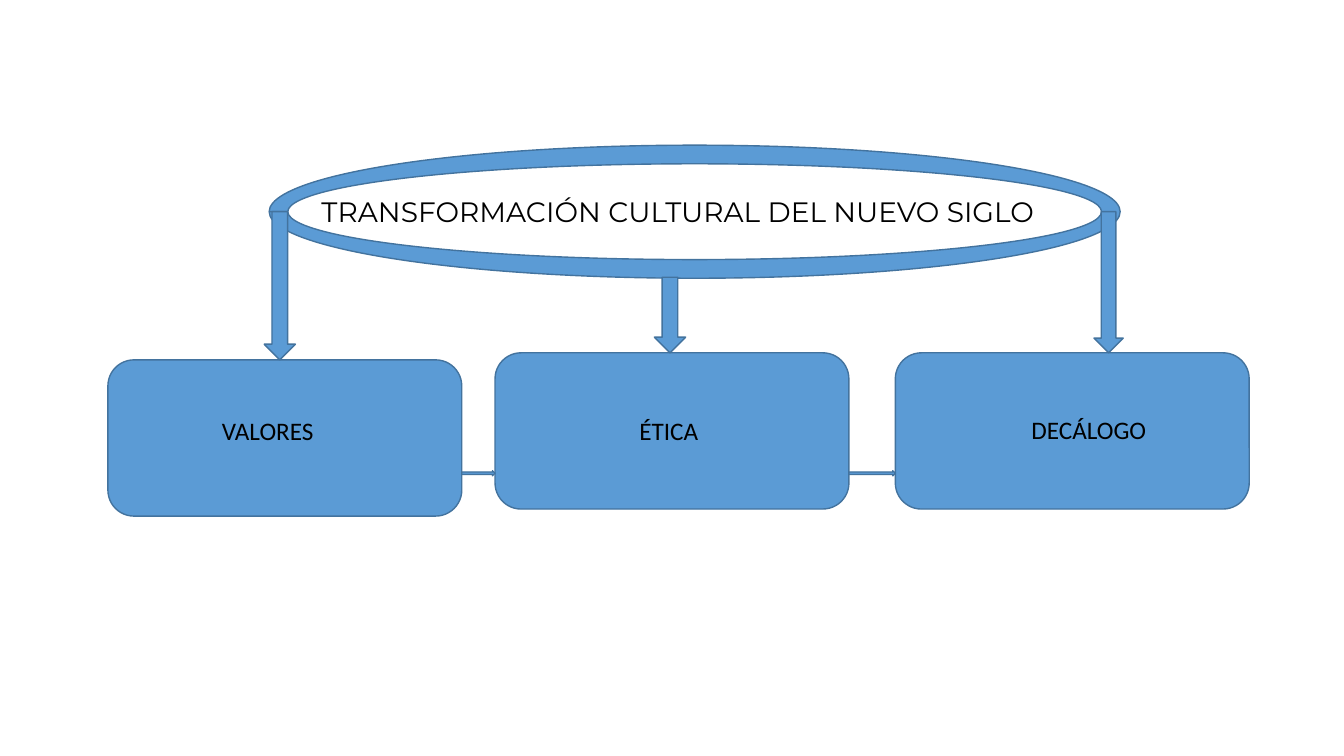
"""Build a slide on the cultural change of the new century and its three parts."""
from pptx import Presentation
from pptx.dml.color import RGBColor
from pptx.enum.shapes import MSO_SHAPE
from pptx.util import Inches, Pt

ROUND = MSO_SHAPE.ROUNDED_RECTANGLE
RING = MSO_SHAPE.BLOCK_ARC
DOWN = MSO_SHAPE.DOWN_ARROW
RIGHT = MSO_SHAPE.RIGHT_ARROW
COLORS = {"fill": "5B9BD5", "line": "43739E", "text": "000000"}

deck = Presentation()
deck.slide_width, deck.slide_height = Inches(13.33), Inches(7.5)
slide = deck.slides.add_slide(deck.slide_layouts[6])


def add_shape(kind, left, top, width, height):
    shape = slide.shapes.add_shape(
        kind, Inches(left), Inches(top), Inches(width), Inches(height))
    shape.shadow.inherit = False
    shape.fill.solid()
    shape.fill.fore_color.rgb = RGBColor.from_string(COLORS["fill"])
    shape.line.color.rgb = RGBColor.from_string(COLORS["line"])
    shape.line.width = Pt(1)
    return shape


def add_text(words, left, top, width, height, inset, size, font):
    box = slide.shapes.add_textbox(
        Inches(left), Inches(top), Inches(width), Inches(height))
    frame = box.text_frame
    frame.word_wrap = True
    frame.margin_left = Inches(inset)
    run = frame.paragraphs[0].add_run()
    run.text = words
    run.font.size = Pt(size)
    run.font.name = font
    run.font.color.rgb = RGBColor.from_string(COLORS["text"])


for left, top in [(1.07, 3.57), (4.91, 3.5), (8.88, 3.5)]:
    add_shape(ROUND, left, top, 3.51, 1.55)

for words, left, top, width, height, inset in [
    ("VALORES", 1.7, 4.07, 2.45, 0.4, 0.5),
    ("DECÁLOGO", 10.07, 4.06, 3.07, 0.4, 0.16),
    ("ÉTICA", 5.67, 4.07, 2.75, 0.71, 0.67),
]:
    add_text(words, left, top, width, height, inset, 18, "Calibri")

ring = add_shape(RING, 2.67, 1.44, 8.44, 1.32)
for index, value in enumerate([108, 108, 0.14]):
    ring.adjustments[index] = value

for left, top, width, height in [
    (6.49, 2.75, 0.31, 0.75),
    (2.62, 2.1, 0.31, 1.47),
    (10.85, 2.1, 0.29, 1.4),
]:
    add_shape(DOWN, left, top, width, height)

for left, width in [(4.58, 0.33), (8.42, 0.46)]:
    add_shape(RIGHT, left, 4.67, width, 0.05)

add_text("TRANSFORMACIÓN CULTURAL DEL NUEVO SIGLO",
         3.09, 1.88, 7.92, 0.44, 0.1, 20, "Montserrat")

deck.save("out.pptx")
